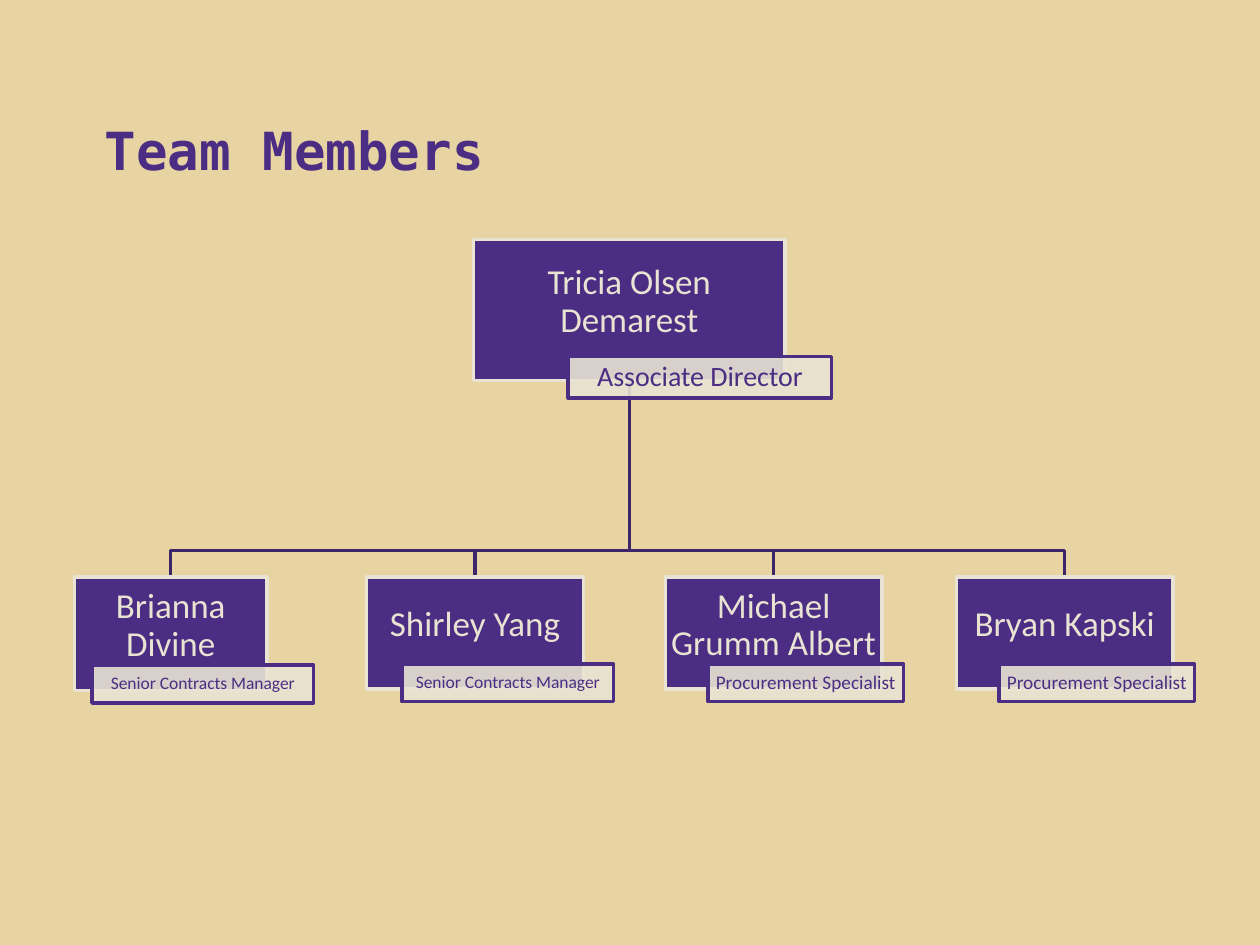
from lxml.etree import SubElement
from pptx import Presentation
from pptx.dml.color import RGBColor
from pptx.enum.shapes import MSO_SHAPE
from pptx.enum.text import MSO_ANCHOR, PP_ALIGN
from pptx.oxml.ns import qn
from pptx.util import Inches, Pt

COLORS = {
    "sand": "E8D3A2",
    "purple": "4B2E83",
    "branch": "3C2569",
    "cream": "E8E3D3",
}

# name, name box, role, role box, role size; boxes are left, top, width, height
DIRECTOR = ("Tricia Olsen Demarest", (3.76, 1.9, 2.47, 1.12),
            "Associate Director", (4.51, 2.83, 2.09, 0.33), 16)
REPORTS = [
    ("Brianna Divine", (0.59, 4.58, 1.53, 0.9),
     "Senior Contracts Manager", (0.73, 5.28, 1.76, 0.3), 10),
    ("Shirley Yang", (2.91, 4.58, 1.72, 0.89),
     "Senior Contracts Manager", (3.19, 5.27, 1.68, 0.3), 10),
    ("Michael Grumm Albert", (5.28, 4.58, 1.72, 0.89),
     "Procurement Specialist", (5.62, 5.27, 1.55, 0.3), 11),
    ("Bryan Kapski", (7.59, 4.58, 1.72, 0.89),
     "Procurement Specialist", (7.93, 5.27, 1.55, 0.3), 11),
]
BRANCH_Y = 4.37


def color(name):
    return RGBColor.from_string(COLORS[name])


def place_title(slide, box):
    title = slide.shapes.title
    title.left, title.top, title.width, title.height = map(Inches, box)
    frame = title.text_frame
    frame.text = "Team Members"
    frame.vertical_anchor = MSO_ANCHOR.BOTTOM
    heading = frame.paragraphs[0]
    heading.alignment = PP_ALIGN.LEFT
    font = heading.runs[0].font
    font.name, font.size, font.bold = "DejaVu Sans Mono", Pt(30), True
    font.color.rgb = color("purple")


def add_branch(slide, parent_box, child_box):
    left, top, width, height = parent_box
    start_x, start_y = left + width / 2, top + height
    child_x, child_y = child_box[0] + child_box[2] / 2, child_box[1]
    builder = slide.shapes.build_freeform(Inches(start_x), Inches(start_y))
    corners = [(start_x, BRANCH_Y), (child_x, BRANCH_Y), (child_x, child_y)]
    builder.add_line_segments(
        [(Inches(x), Inches(y)) for x, y in corners], close=False)
    branch = builder.convert_to_shape()
    branch.shadow.inherit = False
    branch.fill.background()
    branch.line.color.rgb = color("branch")
    branch.line.width = Pt(2)


def add_label(slide, box, text, size, fill, ink, insets):
    label = slide.shapes.add_shape(MSO_SHAPE.RECTANGLE, *map(Inches, box))
    label.shadow.inherit = False
    label.fill.solid()
    label.fill.fore_color.rgb = color(fill)
    label.line.color.rgb = color(ink)
    label.line.width = Pt(2)
    frame = label.text_frame
    frame.word_wrap = True
    frame.vertical_anchor = MSO_ANCHOR.MIDDLE
    (frame.margin_left, frame.margin_top,
     frame.margin_right, frame.margin_bottom) = map(Inches, insets)
    frame.text = text
    paragraph = frame.paragraphs[0]
    paragraph.alignment = PP_ALIGN.CENTER
    paragraph.line_spacing = 0.9
    font = paragraph.runs[0].font
    font.name, font.size = "Calibri", Pt(size)
    font.color.rgb = color(ink)
    return label


def add_member(slide, name, name_box, role, role_box, role_size):
    add_label(slide, name_box, name, 20, "purple", "cream",
              (0.01, 0.01, 0.01, 0.13))
    role_tag = add_label(slide, role_box, role, role_size, "cream", "purple",
                         (0.03, 0.01, 0.03, 0.01))
    # Let the name box show faintly through the role tag
    tint = role_tag.fill._xPr.find(qn("a:solidFill"))[0]
    SubElement(tint, qn("a:alpha"), val="90000")


def add_team_chart(slide):
    for report in REPORTS:
        add_branch(slide, DIRECTOR[1], report[1])
    for member in [DIRECTOR, *REPORTS]:
        add_member(slide, *member)


def main():
    prs = Presentation()
    prs.slide_width, prs.slide_height = Inches(10), Inches(7.5)
    slide = prs.slides.add_slide(prs.slide_layouts[5])
    slide.background.fill.solid()
    slide.background.fill.fore_color.rgb = color("sand")
    place_title(slide, (0.73, 0.41, 8.95, 1.08))
    add_team_chart(slide)
    prs.save("out.pptx")


if __name__ == "__main__":
    main()
